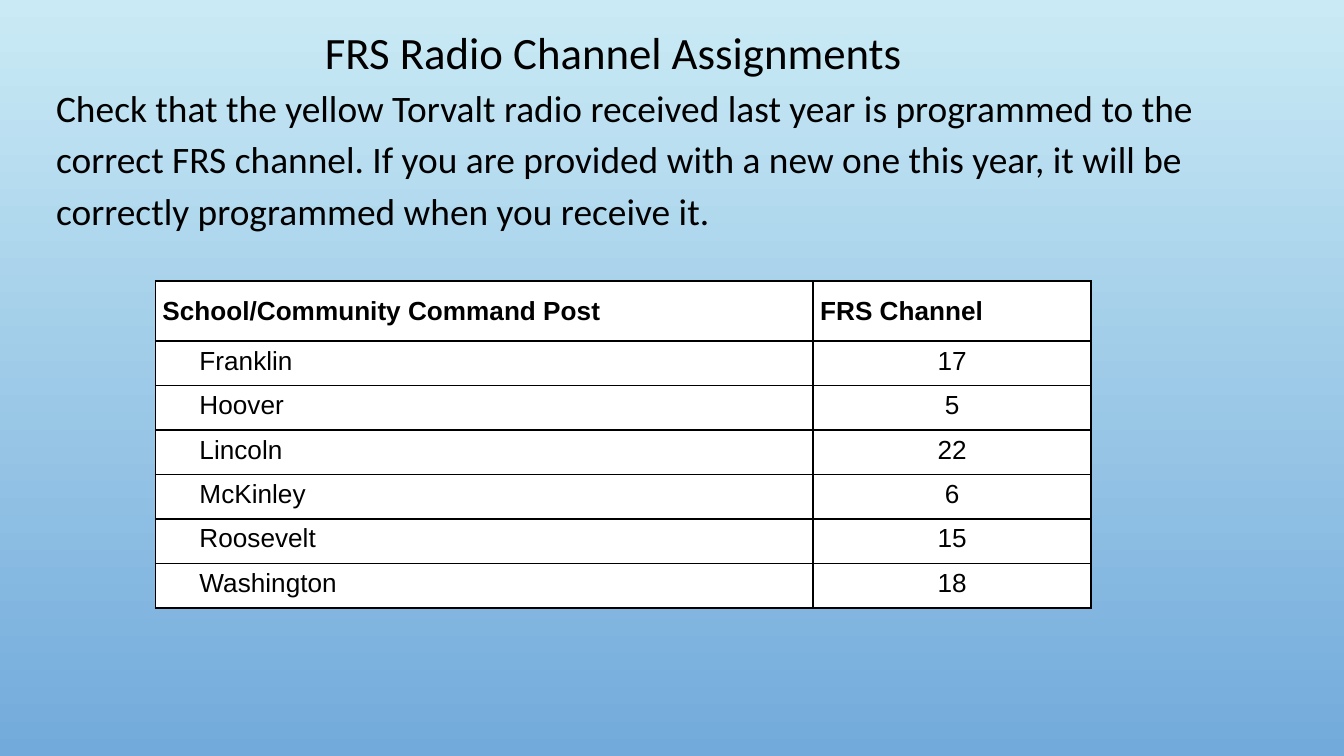
import pptx
import pptx.util
import pptx.dml.color
import pptx.enum.text
import pptx.oxml.ns
from lxml import etree
from pptx.util import Cm

COLOURS = {"sky": "CAEBF5", "blue": "72AADB", "ink": "000000", "paper": "FFFFFF"}
ALIGN = pptx.enum.text.PP_ALIGN
ANCHOR = pptx.enum.text.MSO_ANCHOR

TITLE = "FRS Radio Channel Assignments"
NOTICE = (
    "Check that the yellow Torvalt radio received last year is programmed to the "
    "correct FRS channel. If you are provided with a new one this year, it will be "
    "correctly programmed when you receive it."
)
HEADINGS = ("School/Community Command Post", "FRS Channel")
CHANNELS = [
    ("Franklin", 17),
    ("Hoover", 5),
    ("Lincoln", 22),
    ("McKinley", 6),
    ("Roosevelt", 15),
    ("Washington", 18),
]


def colour(name):
    return pptx.dml.color.RGBColor.from_string(COLOURS[name])


def format_para(para, font, size, align, margin=0, bold=False):
    properties = para._p.get_or_add_pPr()
    properties.set("marL", str(Cm(margin)))
    properties.set("indent", "0")
    para.alignment = align
    for span in para.runs:
        span.font.name = font
        span.font.size = pptx.util.Pt(size)
        span.font.bold = bold
        span.font.color.rgb = colour("ink")


def paint_background(page):
    fill = page.background.fill
    fill.gradient()
    fill.gradient_angle = 270
    for stop, name in zip(fill.gradient_stops, ("sky", "blue")):
        stop.color.rgb = colour(name)


def place_text(holder, box, text, size, margin, spacing, anchor):
    """Fill a placeholder with one paragraph inside the given box."""
    holder.left, holder.top, holder.width, holder.height = (Cm(side) for side in box)
    frame = holder.text_frame
    frame.text = text
    frame.word_wrap = True
    frame.auto_size = pptx.enum.text.MSO_AUTO_SIZE.NONE
    frame.vertical_anchor = anchor
    frame.margin_left = frame.margin_right = Cm(0.16)
    frame.margin_top = frame.margin_bottom = Cm(0.16)
    para = frame.paragraphs[0]
    properties = para._p.get_or_add_pPr()
    etree.SubElement(properties, pptx.oxml.ns.qn("a:buNone"))
    para.line_spacing = spacing
    para.space_before = pptx.util.Pt(0)
    format_para(para, "Calibri", size, ALIGN.LEFT, margin)


def add_borders(cell):
    properties = cell._tc.get_or_add_tcPr()
    for side in ("lnL", "lnR", "lnT", "lnB"):
        line = etree.SubElement(properties, pptx.oxml.ns.qn("a:" + side), w="12700")
        fill = etree.SubElement(line, pptx.oxml.ns.qn("a:solidFill"))
        etree.SubElement(fill, pptx.oxml.ns.qn("a:srgbClr"), val=COLOURS["ink"])


def place_channel_table(page, box):
    left, top, width, height = box
    rows = [HEADINGS] + CHANNELS
    header_height, post_width = 1.14, 12.43
    table = page.shapes.add_table(
        len(rows), len(HEADINGS), Cm(left), Cm(top), Cm(width), Cm(height)
    ).table
    table.horz_banding = False
    table.columns[0].width = Cm(post_width)
    table.columns[1].width = Cm(width - post_width)
    row_height = (height - header_height) / len(CHANNELS)

    for row_index, values in enumerate(rows):
        header = row_index == 0
        table.rows[row_index].height = Cm(header_height if header else row_height)
        for column_index, value in enumerate(values):
            cell = table.cell(row_index, column_index)
            cell.text = str(value)
            cell.margin_left = cell.margin_right = Cm(0.13)
            cell.margin_top = cell.margin_bottom = Cm(0.1)
            cell.vertical_anchor = ANCHOR.MIDDLE if header else ANCHOR.TOP
            add_borders(cell)
            cell.fill.solid()
            cell.fill.fore_color.rgb = colour("paper")
            if header:
                align, margin = ALIGN.JUSTIFY, 0
            elif column_index == 0:
                align, margin = ALIGN.LEFT, 0.7
            else:
                align, margin = ALIGN.CENTER, 0
            format_para(cell.text_frame.paragraphs[0], "Arial", 14, align, margin, header)


def main():
    deck = pptx.Presentation()
    deck.slide_width, deck.slide_height = Cm(25.4), Cm(14.29)
    page = deck.slides.add_slide(deck.slide_layouts[1])
    paint_background(page)

    # Heading and notice
    place_text(page.shapes.title, (0.9, 0.27, 22.07, 1.42), TITLE,
               24, 5.08, 1, ANCHOR.MIDDLE)
    place_text(page.placeholders[1], (0.9, 1.32, 22.07, 3.28), NOTICE,
               20, 0, 1.15, ANCHOR.TOP)

    # Channel list
    place_channel_table(page, (2.94, 5.31, 17.68, 6.18))
    deck.save("out.pptx")


if __name__ == "__main__":
    main()
